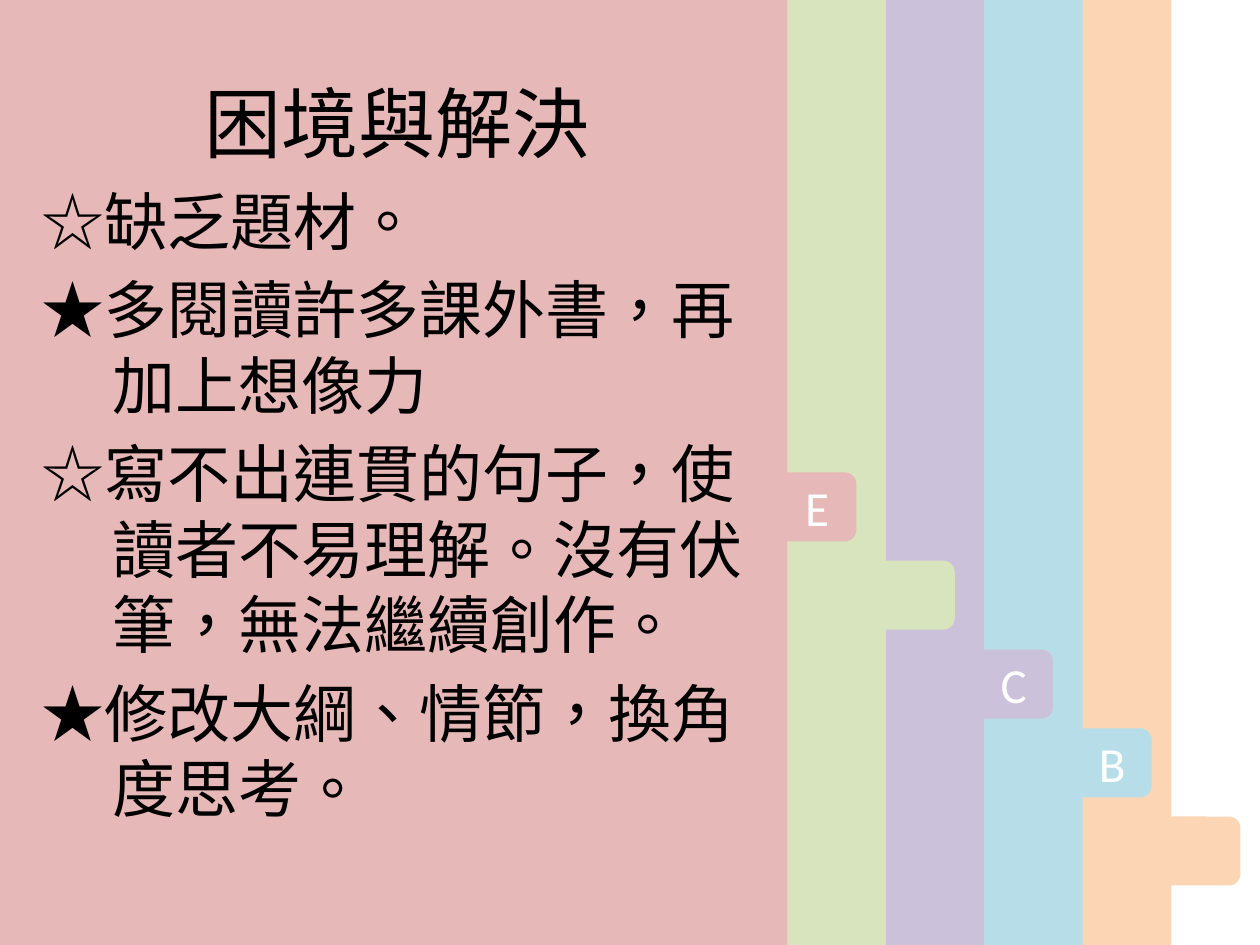
from pptx import Presentation
from pptx.dml.color import RGBColor
from pptx.enum.shapes import MSO_SHAPE
from pptx.enum.text import MSO_ANCHOR, PP_ALIGN
from pptx.oxml.ns import qn
from pptx.util import Pt

RECTANGLE = MSO_SHAPE.RECTANGLE
ROUNDED = MSO_SHAPE.ROUNDED_RECTANGLE
CENTER, LEFT = PP_ALIGN.CENTER, PP_ALIGN.LEFT
TOP, MIDDLE = MSO_ANCHOR.TOP, MSO_ANCHOR.MIDDLE
TITLE_ONLY = 5
SLIDE_WIDTH, SLIDE_HEIGHT = 720, 540
TAB_WIDTH, TAB_HEIGHT, TAB_OVERLAP = 45, 39.4, 5.6
LINE_FACTOR = 1.2
CHINESE_FONT = "Noto Sans CJK SC"
LATIN_FONT = "Calibri"
COLORS = {
    "orange": "FCD5B5",
    "blue": "B7DEE8",
    "purple": "CCC1DA",
    "green": "D7E4BD",
    "pink": "E6B9B8",
    "tab_text": "FFFFFF",
    "text": "000000",
}
PAGES = [
    ("orange", "", 669.4, 466.6),
    ("blue", "B", 618.7, 416.2),
    ("purple", "C", 562.3, 371.3),
    ("green", "", 506.2, 320.4),
    ("pink", "E", 450, 270),
]
TITLE = "困境與解決"
POINTS = [
    "☆缺乏題材。",
    "★多閱讀許多課外書，再加上想像力",
    "☆寫不出連貫的句子，使讀者不易理解。沒有伏筆，無法繼續創作。",
    "★修改大綱、情節，換角度思考。",
]


def format_paragraph(paragraph, size, font, color, alignment):
    paragraph.alignment = alignment
    paragraph.font.size = Pt(size)
    paragraph.font.name = font
    paragraph.font.color.rgb = RGBColor.from_string(COLORS[color])


def format_chinese(paragraph, size, alignment):
    format_paragraph(paragraph, size, CHINESE_FONT, "text", alignment)
    paragraph.line_spacing = Pt(size * LINE_FACTOR)
    for run in paragraph.runs:
        properties = run.font._element
        properties.set("lang", "zh-TW")
        east_asian = properties.makeelement(qn("a:ea"), {"typeface": CHINESE_FONT})
        properties.append(east_asian)


def add_block(group, kind, left, top, width, height, color):
    shape = group.shapes.add_shape(kind, Pt(left), Pt(top), Pt(width), Pt(height))
    shape.shadow.inherit = False
    shape.fill.solid()
    shape.fill.fore_color.rgb = RGBColor.from_string(COLORS[color])
    shape.line.fill.background()
    return shape


def add_page(slide, color, letter, width, tab_top):
    group = slide.shapes.add_group_shape()
    add_block(group, RECTANGLE, 0, 0, width, SLIDE_HEIGHT, color)
    tab = add_block(group, ROUNDED, width - TAB_OVERLAP, tab_top,
                    TAB_WIDTH, TAB_HEIGHT, color)
    if letter:
        frame = tab.text_frame
        frame.text = letter
        frame.vertical_anchor = MIDDLE
        format_paragraph(frame.paragraphs[0], 28, LATIN_FONT, "tab_text", CENTER)


def place_title(slide):
    title = slide.shapes.title
    slide.shapes._spTree.append(title._element)
    title.left, title.top = Pt(0), Pt(39.6)
    title.width, title.height = Pt(453.6), Pt(79.9)
    frame = title.text_frame
    frame.text = TITLE
    frame.vertical_anchor = TOP
    format_chinese(frame.paragraphs[0], 44, CENTER)


def add_points(slide):
    box = slide.shapes.add_textbox(Pt(16.6), Pt(101.5), Pt(421.9), Pt(354.2))
    frame = box.text_frame
    frame.word_wrap = True
    frame.margin_top = Pt(2.9)
    for index, text in enumerate(POINTS):
        paragraph = frame.paragraphs[0] if index == 0 else frame.add_paragraph()
        paragraph.text = text
        format_chinese(paragraph, 36, LEFT)
        paragraph.space_before = Pt(7.2 if index else 0)
        properties = paragraph._p.get_or_add_pPr()
        properties.set("marL", str(Pt(40.5)))
        properties.set("indent", str(Pt(-40.5)))


def main():
    presentation = Presentation()
    presentation.slide_width = Pt(SLIDE_WIDTH)
    presentation.slide_height = Pt(SLIDE_HEIGHT)
    slide = presentation.slides.add_slide(presentation.slide_layouts[TITLE_ONLY])
    for page in PAGES:
        add_page(slide, *page)
    place_title(slide)
    add_points(slide)
    presentation.save("out.pptx")


if __name__ == "__main__":
    main()
